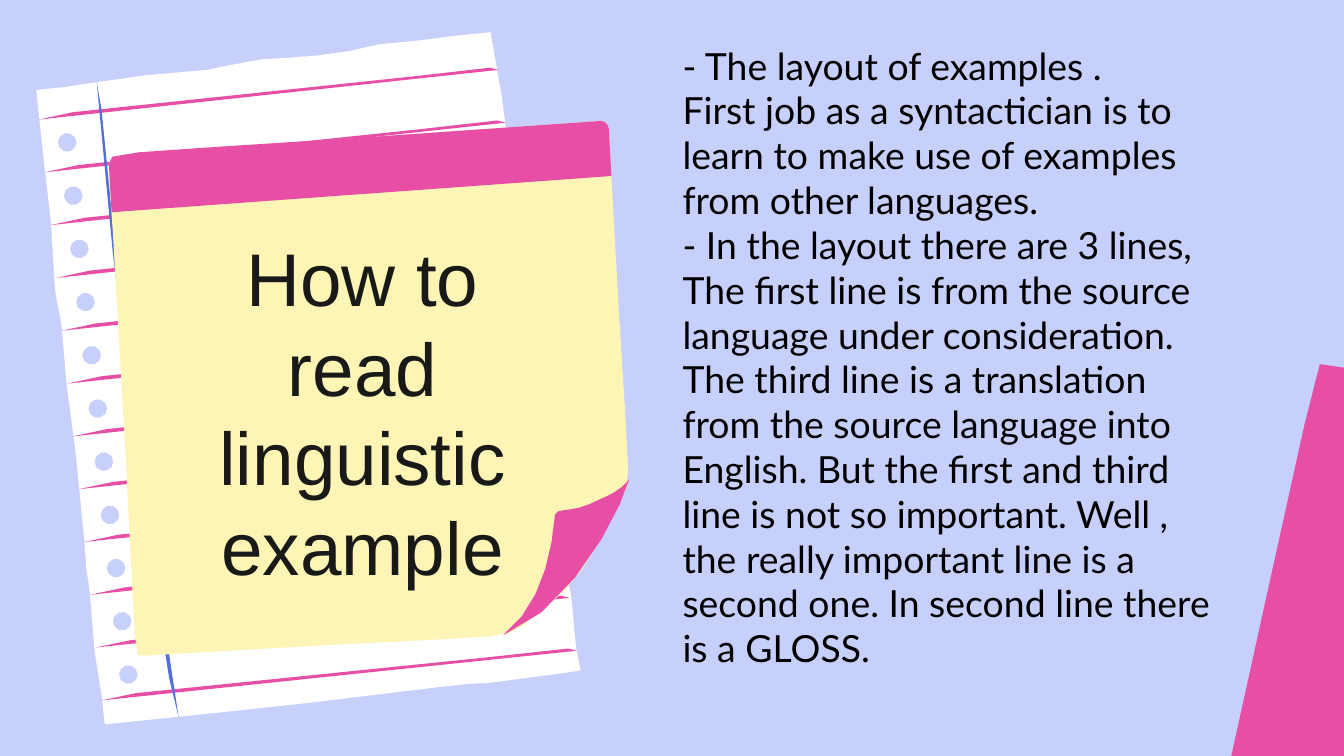
from math import cos, pi, radians, sin

from pptx import Presentation
from pptx.dml.color import RGBColor
from pptx.enum.text import PP_ALIGN as Align
from pptx.util import Cm, Pt

LAVENDER = RGBColor(0xC7, 0xCF, 0xFB)
WHITE = RGBColor(0xFF, 0xFF, 0xFF)
PINK = RGBColor(0xE6, 0x4F, 0xA5)
BLUE = RGBColor(0x54, 0x70, 0xD6)
YELLOW = RGBColor(0xFD, 0xF5, 0xB6)
INK = RGBColor(0x19, 0x19, 0x18)
BLACK = RGBColor(0x00, 0x00, 0x00)

UNIT = 2.54  # centimetres in one unit of the outlines below
PAPER_TILT, NOTE_TILT, CARD_TILT = -6.4, -3.2, 14.4
RULE_COUNT, HOLE_COUNT = 12, 11

# Outlines: a start point, then three points for each cubic curve
PAPER = [
    (4.29, 4.84), (4.27, 4.72), (4.27, 4.58), (4.25, 4.44),
    (4.19, 4.12), (4.23, 4.35), (4.19, 4.03), (4.15, 3.67), (4.08, 3.44), (4.03, 2.85),
    (4.02, 2.71), (4.03, 2.79), (3.97, 2.46), (3.89, 2), (3.69, 0.24), (3.65, 0.24),
    (3.36, 0.26), (3.03, 0.32), (3.03, 0.31), (2.7, 0.35), (3, 0.29), (2.6, 0.38),
    (2.43, 0.42), (1.98, 0.44), (1.96, 0.44), (1.94, 0.44), (1.58, 0.51), (1.54, 0.52),
    (1.15, 0.53), (0.43, 0.66), (0.47, 0.65), (0.46, 0.65), (0.27, 0.67), (0.27, 0.67),
    (0.27, 0.67), (0.33, 1.24), (0.38, 1.66), (0.38, 1.66), (0.4, 2.01), (0.41, 2.16),
    (0.41, 2.18), (0.46, 2.41), (0.46, 2.44), (0.47, 2.84), (0.57, 3.23), (0.63, 4.04),
    (0.64, 4.33), (0.66, 4.28), (0.67, 4.43), (0.72, 5.11), (0.7, 4.76), (0.76, 5.2),
    (0.78, 5.38), (0.77, 5.39), (0.79, 5.39), (1.55, 5.31), (2.21, 5.25), (3.21, 5.12),
    (3.6, 5.07), (3.61, 5.09), (3.65, 5.08), (4.45, 4.93), (4.33, 5.11), (4.29, 4.84),
]
FIRST_RULE = [
    (3.71, 0.52), (3.7, 0.52), (0.29, 0.89), (0.29, 0.89),
    (0.29, 0.85), (0.04, 0.89), (3.06, 0.57), (3.77, 0.49), (3.7, 0.49), (3.71, 0.52),
]
MARGIN = [
    (1.33, 5.34), (1.27, 5.35), (0.88, 2.62), (0.72, 0.61),
    (0.77, 0.6), (0.85, 2.46), (1.33, 5.34),
]
CARD = [
    (12.09, 5.03), (12.12, 4.89), (12.18, 4.92), (12.42, 4.77),
    (12.52, 4.71), (12.49, 4.71), (12.59, 4.21), (12.62, 4.07), (12.77, 3.4), (12.76, 3.35),
    (12.75, 3.3), (12.71, 3.3), (12.47, 3.25), (11.22, 3), (9.85, 2.66), (9.82, 2.71),
    (9.78, 2.77), (9.5, 4.11), (9.15, 5.68), (9, 6.36), (8.98, 6.29), (9.21, 6.36),
    (11.76, 6.99), (11.63, 6.99), (11.66, 6.97), (11.75, 6.91), (12.04, 5.31), (12.09, 5.03),
]
NOTE = [
    (4.62, 3.72), (4.35, 4.3), (4.18, 4.44), (3.9, 4.65),
    (3.68, 4.78), (3.99, 4.7), (1.07, 4.88), (0.97, 4.89), (1.04, 5.01), (0.85, 1.9),
    (0.83, 1.51), (0.83, 1.68), (0.81, 1.22), (0.81, 1.1), (0.77, 1.18), (4.47, 0.9),
    (4.5, 0.9), (4.53, 0.93), (4.53, 0.96), (4.68, 3.85), (4.72, 3.5), (4.62, 3.72),
]
CURL = [
    (4.68, 3.57), (4.63, 3.78), (4.25, 4.54), (3.74, 4.73),
    (4.01, 4.52), (4.1, 4.17), (4.13, 3.83), (4.14, 3.78), (4.26, 3.81), (4.39, 3.75),
    (4.49, 3.7), (4.6, 3.67), (4.68, 3.57),
]
NOTE_BAND = [
    (4.53, 0.96), (4.53, 0.96), (4.55, 1.31), (4.55, 1.31),
    (4.55, 1.31), (0.83, 1.58), (0.83, 1.58), (0.83, 1.58), (0.81, 1.22), (0.81, 1.22),
    (0.81, 1.1), (0.78, 1.17), (4.47, 0.9), (4.5, 0.9), (4.53, 0.93), (4.53, 0.96),
]

TITLE = "How to read linguistic example"
EXPLANATION = [
    "- The layout of examples .",
    "First job as a syntactician is to learn to make use of examples from other languages.",
    "- In the layout there are 3 lines, The first line is from the source language under "
    "consideration. The third line is a translation from the source language into English. "
    "But the first and third line is not so important. Well , the really important line is "
    "a second one. In second line there is a GLOSS.",
]


def trace(outline, steps):
    """Turn cubic curves into a list of points along them."""
    points = [outline[0]]
    for i in range(0, len(outline) - 1, 3):
        corners = outline[i:i + 4]
        for step in range(1, steps + 1):
            t = step / steps
            weights = ((1 - t) ** 3, 3 * t * (1 - t) ** 2, 3 * t * t * (1 - t), t ** 3)
            points.append(tuple(sum(w * c[axis] for w, c in zip(weights, corners))
                                for axis in (0, 1)))
    return points


def circle(x, y, radius, steps=10):
    return [(x + radius * cos(2 * pi * k / steps), y + radius * sin(2 * pi * k / steps))
            for k in range(steps)]


def turn(point, degrees):
    x, y = point
    c, s = cos(radians(degrees)), sin(radians(degrees))
    return x * c - y * s, x * s + y * c


def add_cutout(slide, contours, color, tilt):
    """Draw contours upright, then tilt the shape into its place."""
    upright = [[tuple(Cm(UNIT * v) for v in turn(point, -tilt)) for point in contour]
               for contour in contours]
    builder = slide.shapes.build_freeform(*upright[0][0])
    builder.add_line_segments(upright[0][1:])
    for contour in upright[1:]:
        builder.move_to(*contour[0])
        builder.add_line_segments(contour[1:])
    cutout = builder.convert_to_shape()
    center_x, center_y = turn((cutout.left + cutout.width / 2,
                               cutout.top + cutout.height / 2), tilt)
    cutout.left = round(center_x - cutout.width / 2)
    cutout.top = round(center_y - cutout.height / 2)
    cutout.rotation = tilt
    cutout.shadow.inherit = False
    cutout.fill.solid()
    cutout.fill.fore_color.rgb = color
    cutout.line.fill.background()


def add_text(slide, box, paragraphs, font, size, color, align=Align.LEFT, spacing=None):
    frame = slide.shapes.add_textbox(*(Cm(v) for v in box)).text_frame
    frame.word_wrap = True
    frame.margin_left = frame.margin_right = frame.margin_top = frame.margin_bottom = 0
    for i, text in enumerate(paragraphs):
        paragraph = frame.add_paragraph() if i else frame.paragraphs[0]
        paragraph.alignment = align
        paragraph.line_spacing = spacing
        run = paragraph.add_run()
        run.text = text
        run.font.name = font
        run.font.size = Pt(size)
        run.font.color.rgb = color


def add_notebook_page(slide):
    holes = [circle(0.5 + 0.0455 * i, 1.06 + 0.396 * i, 0.07) for i in range(HOLE_COUNT)]
    add_cutout(slide, [trace(PAPER, 3)] + holes, WHITE, PAPER_TILT)
    # Each rule sits lower and a little further right, and is slightly longer
    for i in range(RULE_COUNT):
        rule = [(x + i * (0.041 + 0.0032 * x), y + 0.393 * i) for x, y in FIRST_RULE]
        add_cutout(slide, [trace(rule, 2)], PINK, PAPER_TILT)
    add_cutout(slide, [trace(MARGIN, 5)], BLUE, PAPER_TILT)


def add_sticky_note(slide):
    for outline, color in ((NOTE, YELLOW), (CURL, PINK), (NOTE_BAND, PINK)):
        add_cutout(slide, [trace(outline, 5)], color, NOTE_TILT)


def main():
    deck = Presentation()
    deck.slide_width, deck.slide_height = Cm(25.4), Cm(14.29)
    slide = deck.slides.add_slide(deck.slide_layouts[6])
    slide.background.fill.solid()
    slide.background.fill.fore_color.rgb = LAVENDER

    # Paper pieces
    add_notebook_page(slide)
    add_cutout(slide, [trace(CARD, 3)], PINK, CARD_TILT)
    add_sticky_note(slide)

    # Text
    add_text(slide, (3.33, 4.39, 7.04, 6.83), [TITLE], "Arial", 40, INK,
             Align.CENTER, Pt(48))
    add_text(slide, (12.9, 0.81, 10.36, 12.83), EXPLANATION, "Lato", 20, BLACK)
    deck.save("out.pptx")


if __name__ == "__main__":
    main()
